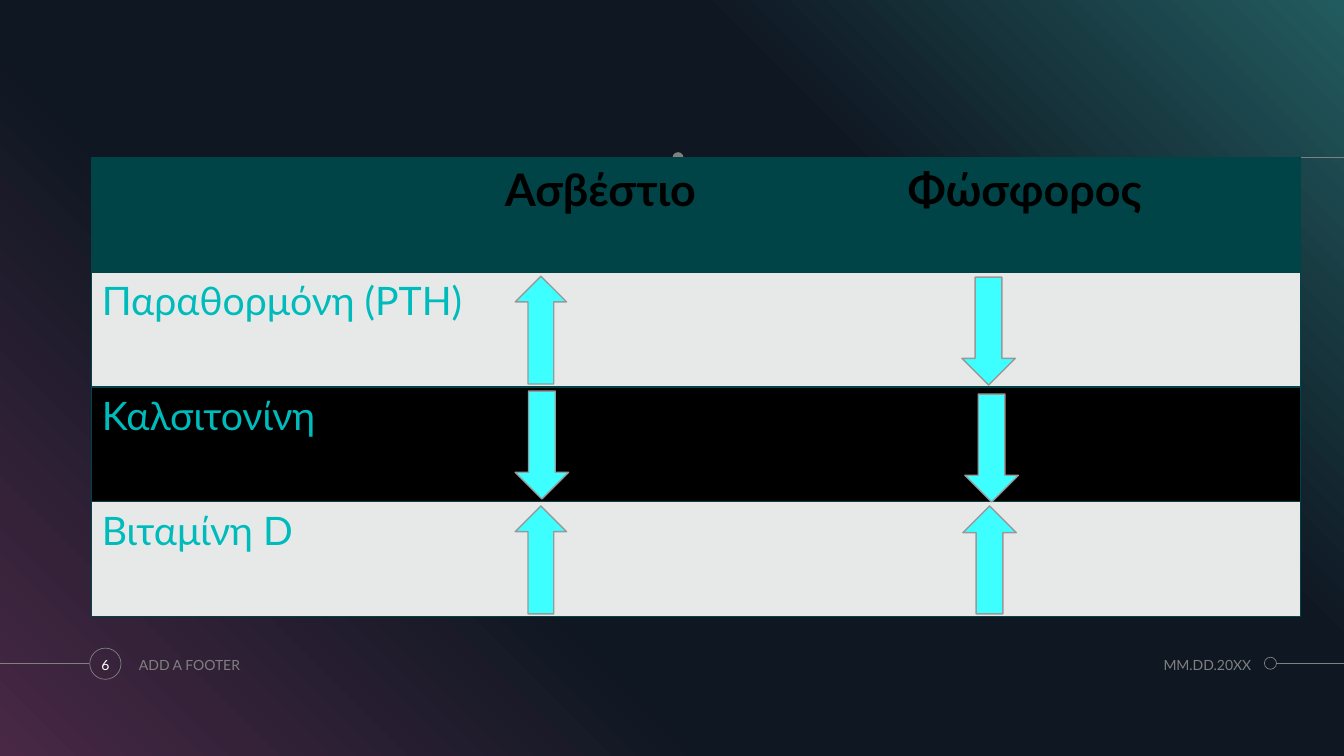
from lxml import etree
from pptx import Presentation
from pptx import util as u
from pptx.dml.color import RGBColor
from pptx.enum import shapes, text
from pptx.oxml import parse_xml
from pptx.oxml.ns import nsdecls, qn

WIDTH, HEIGHT = 13.33, 7.5
GREY, TEAL, CYAN = "808080", "004448", "3DFFFF"
BACKDROP_STOPS = [(0, "482845"), (34, "0F1722"), (69, "0F1722"), (100, "225B5F")]
ROWS = [
    ("", "Ασβέστιο", "Φώσφορος"),
    ("Παραθορμόνη (PTH)", "", ""),
    ("Καλσιτονίνη", "", ""),
    ("Βιταμίνη D", "", ""),
]
ROW_FILLS = [TEAL, "E7E9E9", "000000", "E7E9E9"]
UP, DOWN = shapes.MSO_SHAPE.UP_ARROW, shapes.MSO_SHAPE.DOWN_ARROW
# Direction, offset from the table's corner, width
ARROWS = [
    (UP, 4.2, 1.18, 0.51), (DOWN, 8.63, 1.19, 0.53),
    (DOWN, 4.2, 2.32, 0.53), (DOWN, 8.66, 2.35, 0.53),
    (UP, 4.2, 3.46, 0.51), (UP, 8.64, 3.46, 0.53),
]


def color(value):
    return RGBColor.from_string(value)


def lengths(*values):
    return [u.Inches(value) for value in values]


def add_shape(page, kind, box, fill=None, line=None, weight=0.5):
    shape = page.shapes.add_shape(kind, *lengths(*box))
    shape.shadow.inherit = False
    if fill:
        shape.fill.solid()
        shape.fill.fore_color.rgb = color(fill)
    else:
        shape.fill.background()
    if line:
        shape.line.color.rgb = color(line)
        shape.line.width = u.Pt(weight)
    else:
        shape.line.fill.background()
    return shape


def add_line(page, start, end):
    line = page.shapes.add_connector(
        shapes.MSO_CONNECTOR.STRAIGHT, *lengths(*start, *end))
    line.line.color.rgb = color(GREY)
    line.line.width = u.Pt(0.5)
    etree.SubElement(line._element.spPr, qn("a:effectLst"))


def write(frame, words, size, fill, bold=False, align=text.PP_ALIGN.LEFT):
    para = frame.paragraphs[0]
    para.alignment = align
    span = para.add_run()
    span.text = words
    span.font.name = "Lato"
    span.font.size = u.Pt(size)
    span.font.bold = bold
    span.font.color.rgb = color(fill)


def add_label(page, box, words, fill=GREY, align=text.PP_ALIGN.LEFT, margin=0.1):
    frame = page.shapes.add_textbox(*lengths(*box)).text_frame
    frame.word_wrap = True
    frame.vertical_anchor = text.MSO_ANCHOR.MIDDLE
    frame.margin_left = frame.margin_right = u.Inches(margin)
    frame.margin_top = frame.margin_bottom = u.Inches(margin / 2)
    write(frame, words, 10, fill, align=align)


def add_backdrop(page, box):
    """Diagonal gradient from the lower left to the upper right."""
    backdrop = add_shape(page, shapes.MSO_SHAPE.RECTANGLE, box)
    backdrop.fill.gradient()
    backdrop.fill.gradient_angle = 45
    stops = backdrop._element.spPr.find(qn("a:gradFill")).find(qn("a:gsLst"))
    for stop in list(stops):
        stops.remove(stop)
    for percent, value in BACKDROP_STOPS:
        stops.append(parse_xml(
            f'<a:gs {nsdecls("a")} pos="{percent * 1000}">'
            f'<a:srgbClr val="{value}"/></a:gs>'))


def add_header_rule(page, box):
    left, top, width, height = box
    middle = top + height / 2
    add_line(page, (left + width, middle), (left, middle))
    add_shape(page, shapes.MSO_SHAPE.OVAL, (left, top, height, height), fill=GREY)


def add_footer(page, box):
    left, top, width, height = box
    right, middle = left + width, top + 0.15
    add_line(page, (right - 0.67, middle), (right, middle))
    add_shape(page, shapes.MSO_SHAPE.OVAL,
              (right - 0.79, top + 0.09, 0.12, 0.12), line=GREY)
    add_line(page, (left, middle), (left + 0.88, middle))
    add_shape(page, shapes.MSO_SHAPE.OVAL, (left + 0.89, top, 0.31, 0.31), line=GREY)
    add_label(page, (right - 2.38, top, 1.46, height), "MM.DD.20XX",
              align=text.PP_ALIGN.RIGHT, margin=0)
    add_label(page, (left + 1.28, top, 3.19, height), "ADD A FOOTER")
    add_label(page, (left + 0.85, top, 0.39, height), "6", "FFFFFF",
              align=text.PP_ALIGN.CENTER)


def set_borders(cell, visible):
    properties = cell._tc.get_or_add_tcPr()
    for side in "LRTB":
        paint = (f'<a:solidFill><a:srgbClr val="{TEAL}"/></a:solidFill>'
                 if side in visible else "<a:noFill/>")
        properties.append(parse_xml(
            f'<a:ln{side} {nsdecls("a")} w="12700">{paint}</a:ln{side}>'))


def add_hormone_table(page, box):
    left, top, width, height = box
    table = page.shapes.add_table(len(ROWS), 3, *lengths(*box)).table
    for column in table.columns:
        column.width = u.Inches(width / 3)
    for index, words in enumerate(ROWS):
        table.rows[index].height = u.Inches(height / len(ROWS))
        for position, entry in enumerate(words):
            cell = table.cell(index, position)
            set_borders(cell, ("LTB", "TB", "RTB")[position])
            cell.fill.solid()
            cell.fill.fore_color.rgb = color(ROW_FILLS[index])
            if entry and index == 0:
                write(cell.text_frame, entry, 32, "000000", bold=True)
            elif entry:
                write(cell.text_frame, entry, 28, "00BBBB")
    for kind, across, down, breadth in ARROWS:
        add_shape(page, kind, (left + across, top + down, breadth, 1.07),
                  fill=CYAN, line="999999", weight=1)


def main():
    deck = Presentation()
    deck.slide_width, deck.slide_height = lengths(WIDTH, HEIGHT)
    page = deck.slides.add_slide(deck.slide_layouts[6])
    add_backdrop(page, (0, 0, WIDTH, HEIGHT))
    add_header_rule(page, (6.67, 1.51, WIDTH - 6.67, 0.11))
    add_footer(page, (0, 6.43, WIDTH, 0.33))
    add_hormone_table(page, (0.91, 1.56, 11.99, 4.56))
    deck.save("out.pptx")


if __name__ == "__main__":
    main()
